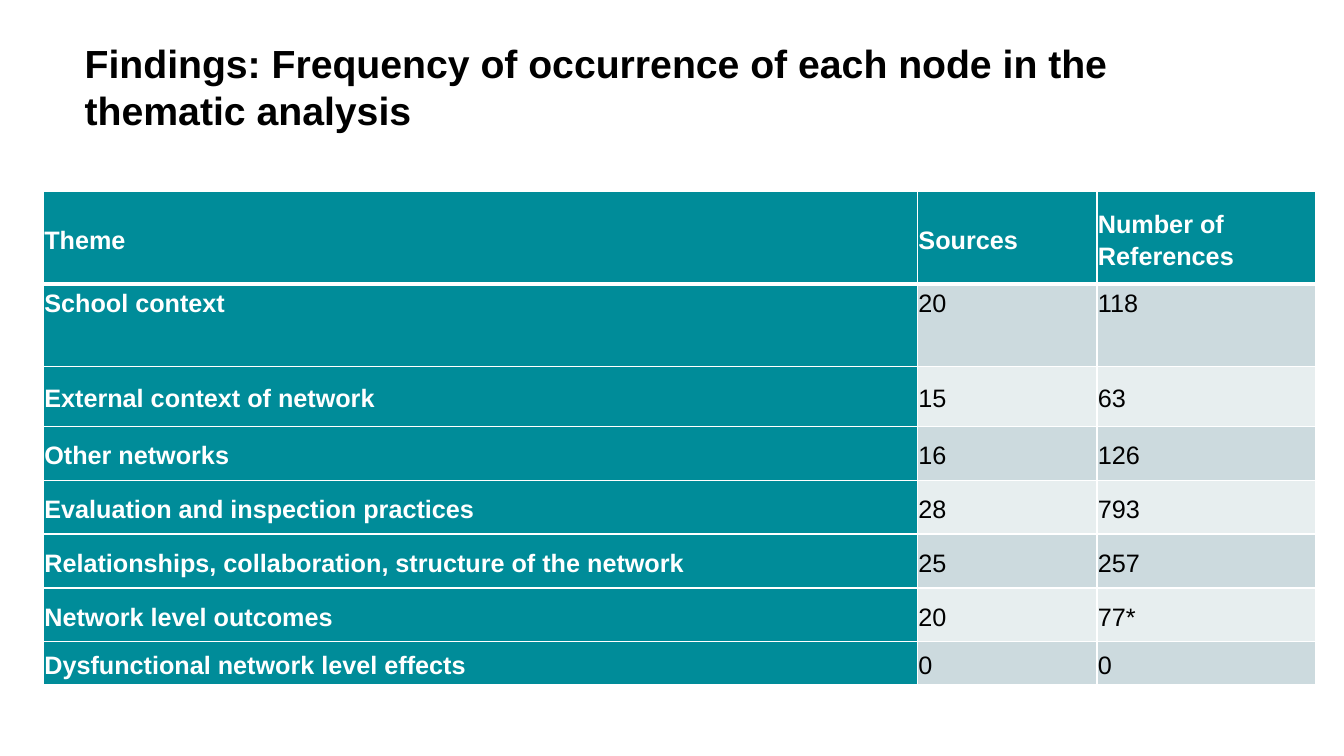
import pptx
import pptx.util
import pptx.dml.color
import pptx.enum.text
import pptx.oxml
import pptx.oxml.ns
from pptx.util import Inches, Pt

RGBColor = pptx.dml.color.RGBColor
ANCHOR = pptx.enum.text.MSO_ANCHOR

# Content
TITLE = "Findings: Frequency of occurrence of each node in the thematic analysis"
ROWS = [
    ("Theme", "Sources", "Number of References"),
    ("School context", "20", "118"),
    ("External context of network", "15", "63"),
    ("Other networks", "16", "126"),
    ("Evaluation and inspection practices", "28", "793"),
    ("Relationships, collaboration, structure of the network", "25", "257"),
    ("Network level outcomes", "20", "77*"),
    ("Dysfunctional network level effects", "0", "0"),
]
COL_WIDTHS = (8.67, 1.78, 2.17)
ROW_HEIGHTS = (0.92, 0.82, 0.59) + (0.535,) * 4 + (0.42,)
TABLE_LEFT, TABLE_TOP = 0.43, 1.9

FONT = "Arial"
TEAL = RGBColor(0x00, 0x8C, 0x99)
BANDS = (RGBColor(0xE7, 0xEE, 0xEF), RGBColor(0xCC, 0xDA, 0xDE))
WHITE = RGBColor(0xFF, 0xFF, 0xFF)
BLACK = RGBColor(0x00, 0x00, 0x00)


def add_run(p, text, size, color, bold):
    r = p.add_run()
    r.text = text
    r.font.name, r.font.size = FONT, Pt(size)
    r.font.color.rgb, r.font.bold = color, bold


def set_borders(cell, widths):
    """Draw white cell edges; widths are points per side."""
    tc_pr = cell._tc.get_or_add_tcPr()
    for i, (side, width) in enumerate(widths.items()):
        tc_pr.insert(i, pptx.oxml.parse_xml(
            f'<a:{side} {pptx.oxml.ns.nsdecls("a")} w="{Pt(width)}">'
            f'<a:solidFill><a:srgbClr val="{WHITE}"/></a:solidFill></a:{side}>'))


prs = pptx.Presentation()
prs.slide_width, prs.slide_height = Inches(13.33), Inches(7.5)
s = prs.slides.add_slide(prs.slide_layouts[5])

# Title
title = s.shapes.title
title.left, title.top = Inches(0.74), Inches(0.37)
title.width, title.height = Inches(12), Inches(0.98)
tf = title.text_frame
tf.word_wrap = True
tf.auto_size = pptx.enum.text.MSO_AUTO_SIZE.NONE
tf.vertical_anchor = ANCHOR.MIDDLE
p = tf.paragraphs[0]
p.alignment = pptx.enum.text.PP_ALIGN.LEFT
add_run(p, TITLE, 28, BLACK, True)

# Table grid
table = s.shapes.add_table(
    len(ROWS), len(COL_WIDTHS), Inches(TABLE_LEFT), Inches(TABLE_TOP),
    Inches(sum(COL_WIDTHS)), Inches(sum(ROW_HEIGHTS))).table
table.first_col = True
for col, width in zip(table.columns, COL_WIDTHS):
    col.width = Inches(width)
for row, height in zip(table.rows, ROW_HEIGHTS):
    row.height = Inches(height)

# Table cells: teal header row and theme column, banded numbers
for i, texts in enumerate(ROWS):
    for j, text in enumerate(texts):
        cell = table.cell(i, j)
        heading = i == 0 or j == 0
        cell.margin_left = cell.margin_right = cell.margin_top = Inches(0.01)
        cell.margin_bottom = 0
        cell.vertical_anchor = ANCHOR.TOP if i == 1 else ANCHOR.MIDDLE
        cell.fill.solid()
        cell.fill.fore_color.rgb = TEAL if heading else BANDS[i % 2]
        set_borders(cell, {"lnL": 1, "lnR": 1, "lnT": 3 if i == 1 else 1,
                           "lnB": 3 if i == 0 else 1})
        p = cell.text_frame.paragraphs[0]
        p.line_spacing, p.space_after = 1.15, Pt(10)
        add_run(p, text, 18, WHITE if heading else BLACK, heading)

prs.save("out.pptx")
